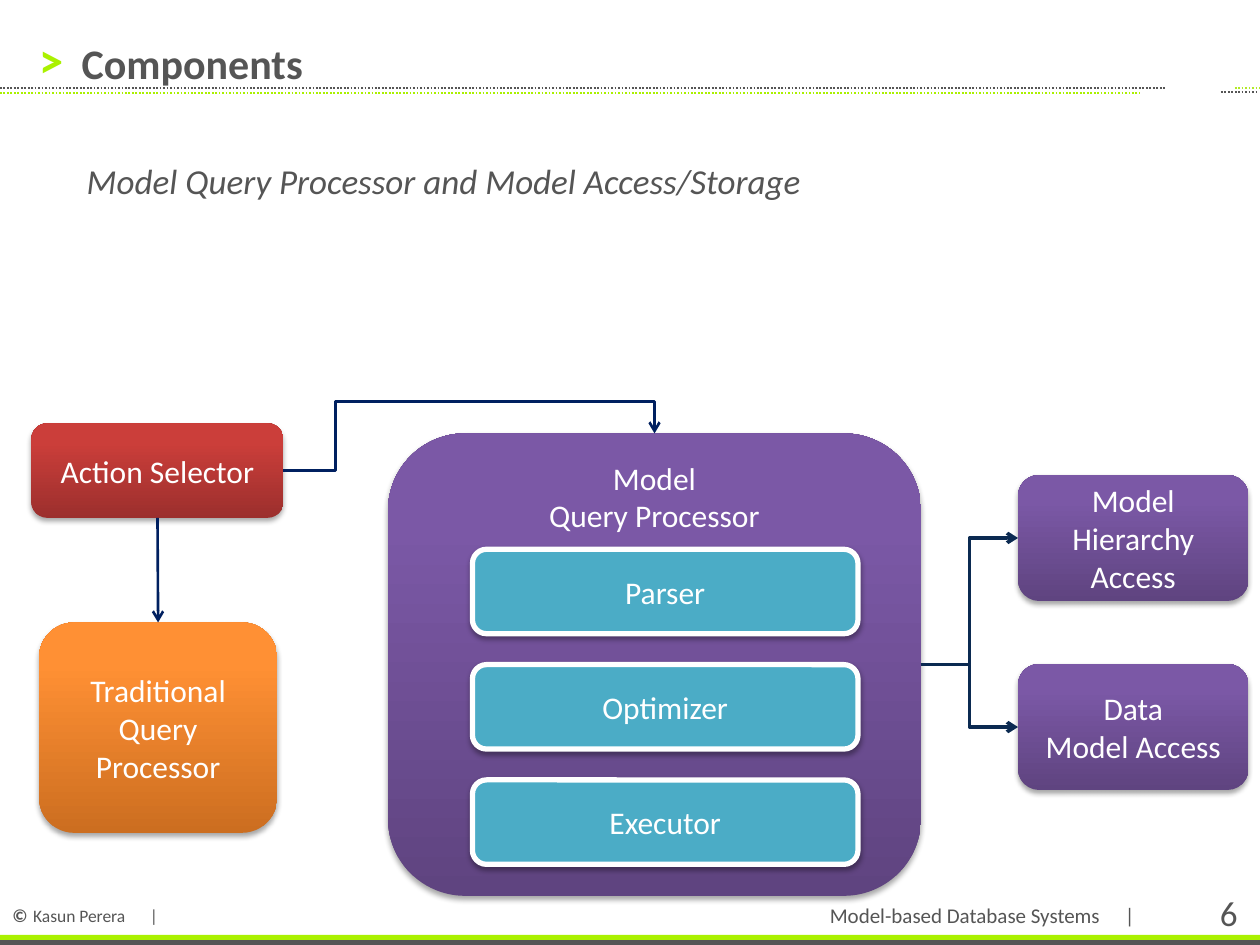
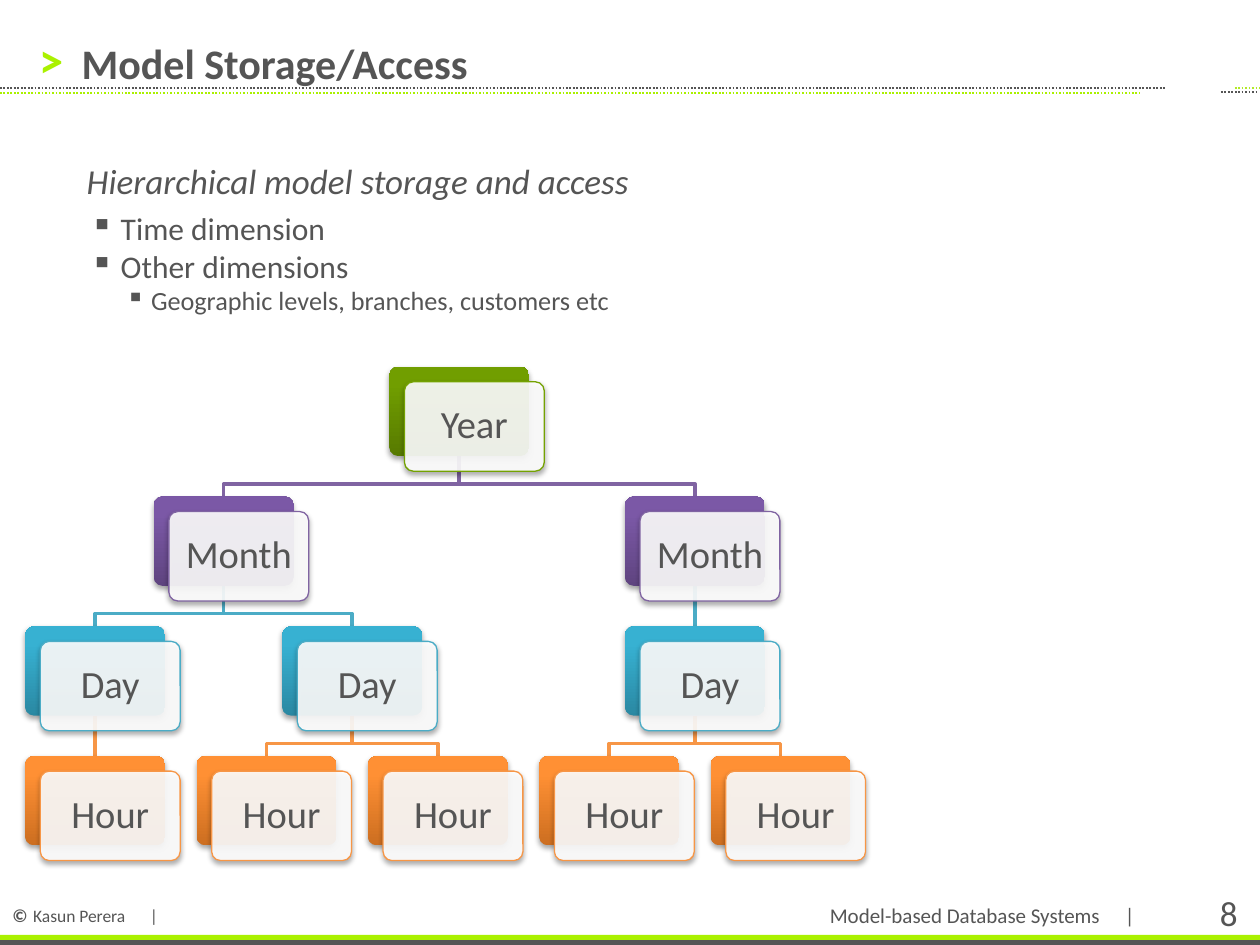
from dataclasses import dataclass

from lxml import etree
from pptx import Presentation
from pptx import util as u
from pptx.dml.color import RGBColor
from pptx.enum import dml, shapes, text
from pptx.oxml import ns

IN = u.Inches
ALIGN = text.PP_ALIGN
ANCHOR = text.MSO_ANCHOR
KIND = shapes.MSO_SHAPE
WIRE = shapes.MSO_CONNECTOR


@dataclass(frozen=True)
class Theme:
    font: str = "Calibri"
    grey: str = "555555"
    lime: str = "AAF100"
    pale_lime: str = "B2E928"
    white: str = "FFFFFF"
    navy: str = "002060"
    dark_blue: str = "0B2A51"
    teal: str = "4BACC6"
    red: tuple = ("9C2F2D", "CB3E3A")
    green: tuple = ("577A00", "719E00")
    purple: tuple = ("5F4480", "7B58A6")
    blue: tuple = ("2A88A2", "37B1D2")
    orange: tuple = ("CC6E20", "FF9034")
    mark: float = 28
    title: float = 24
    card: float = 22
    heading: float = 20
    body: float = 18
    detail: float = 15
    footer: float = 12
    copyright: float = 10


T = Theme()
LEVELS = [
    ("Year", T.green, "74A201"),
    ("Month", T.purple, "8064A2"),
    ("Day", T.blue, T.teal),
    ("Hour", T.orange, "F79646"),
]
HOUR = ()
YEAR = (((HOUR,), (HOUR, HOUR)), ((HOUR, HOUR),))
CARD_W, CARD_H, CARD_SHIFT = 1.11, 0.71, 0.12
TREE_LEFT, TREE_TOP, COLUMN_STEP, ROW_STEP = 0.2, 2.91, 1.36, 1.03


def rgb(value):
    return RGBColor.from_string(value)


def add_xml(parent, tag, **attrs):
    return etree.SubElement(parent, ns.qn(tag), attrs)


def add_run(p, words, size, color=T.grey, bold=False, italic=False):
    r = p.add_run()
    r.text = words
    f = r.font
    f.name, f.size, f.bold, f.italic = T.font, u.Pt(size), bold, italic
    f.color.rgb = rgb(color)


def add_textbox(s, box, anchor=ANCHOR.TOP, align=ALIGN.LEFT, inset=None):
    tf = s.shapes.add_textbox(*map(IN, box)).text_frame
    tf.word_wrap = True
    tf.vertical_anchor = anchor
    if inset is not None:
        set_insets(tf, inset)
    tf.paragraphs[0].alignment = align
    return tf


def set_insets(tf, inset):
    tf.margin_left = tf.margin_right = IN(inset)
    tf.margin_top = tf.margin_bottom = IN(inset)


def add_label(s, box, words, size, **options):
    color = options.pop("color", T.grey)
    bold = options.pop("bold", False)
    tf = add_textbox(s, box, **options)
    add_run(tf.paragraphs[0], words, size, color, bold)


def add_shadow(sp):
    effects = sp._element.spPr.find(ns.qn("a:effectLst"))
    shadow = add_xml(effects, "a:outerShdw", blurRad=str(u.Pt(3.1)),
                     dist=str(u.Pt(1.8)), dir="5400000", rotWithShape="0")
    add_xml(add_xml(shadow, "a:srgbClr", val="000000"), "a:alpha", val="35000")


def set_fill(sp, fill):
    if isinstance(fill, str):
        sp.fill.solid()
        sp.fill.fore_color.rgb = rgb(fill)
        return
    sp.fill.gradient()
    sp.fill.gradient_angle = 90
    for stop, color, position in zip(sp.fill.gradient_stops, fill, (0, 0.8)):
        stop.color.rgb = rgb(color)
        stop.position = position


def set_line(line, color, width):
    line.color.rgb = rgb(color)
    line.width = u.Pt(width)


def add_block(s, box, fill, kind=KIND.ROUNDED_RECTANGLE, line=None, shadow=True):
    sp = s.shapes.add_shape(kind, *map(IN, box))
    sp.shadow.inherit = False
    set_fill(sp, fill)
    if line:
        set_line(sp.line, *line)
    else:
        sp.line.fill.background()
    if shadow:
        add_shadow(sp)
    return sp


def write_block(sp, lines, size=T.body, color=T.white, anchor=ANCHOR.MIDDLE):
    tf = sp.text_frame
    tf.word_wrap = True
    tf.vertical_anchor = anchor
    for i, words in enumerate(lines):
        p = tf.add_paragraph() if i else tf.paragraphs[0]
        p.alignment = ALIGN.CENTER
        add_run(p, words, size, color)
    return tf


def add_line(s, start, end, color, width, kind=WIRE.STRAIGHT, dotted=False):
    c = s.shapes.add_connector(kind, *map(IN, start + end))
    set_line(c.line, color, width)
    if dotted:
        c.line.dash_style = dml.MSO_LINE.ROUND_DOT
    add_xml(c._element.spPr, "a:effectLst")
    return c


def add_arrow(s, source, source_site, target, target_site, color, width,
              kind=WIRE.ELBOW):
    c = add_line(s, (0, 0), (1, 1), color, width, kind)
    c.begin_connect(source, source_site)
    c.end_connect(target, target_site)
    add_xml(c._element.spPr.find(ns.qn("a:ln")), "a:tailEnd", type="arrow")
    return c


def set_two_bends(c, *bends):
    geometry = c._element.spPr.find(ns.qn("a:prstGeom"))
    geometry.set("prst", "bentConnector4")
    guides = geometry.find(ns.qn("a:avLst"))
    if guides is None:
        guides = add_xml(geometry, "a:avLst")
    for i, bend in enumerate(bends, 1):
        add_xml(guides, "a:gd", name=f"adj{i}", fmla=f"val {round(bend * 100000)}")


def add_copyright(s):
    p = add_textbox(s, (0, 7.08, 2.19, 0.34)).paragraphs[0]
    tabs = add_xml(p._p.get_or_add_pPr(), "a:tabLst")
    add_xml(tabs, "a:tab", pos=str(IN(1.09)), algn="l")
    add_run(p, "©", 10.5, bold=True)
    add_run(p, " ", 14)
    add_run(p, "Kasun Perera\t|", T.copyright)


def add_frame(prs, title, number):
    s = prs.slides.add_slide(prs.slide_layouts[6])
    add_copyright(s)
    for top, color in ((7.46, T.grey), (7.42, T.lime)):
        add_block(s, (0, top, 10, 0.04), color, KIND.RECTANGLE, shadow=False)
    for left, right, y, color in (
        (9.69, 9.99, 0.73, T.grey),
        (9.8, 10, 0.7, T.pale_lime),
        (0, 9.25, 0.7, T.grey),
        (0, 9.05, 0.74, T.lime),
    ):
        add_line(s, (left, y), (right, y), color, 1, dotted=True)
    add_label(s, (8.83, 7.11, 0.23, 0.31), "|", T.footer, align=ALIGN.RIGHT)
    add_label(s, (9.14, 7.03, 0.78, 0.44), number, T.heading, align=ALIGN.RIGHT)
    add_label(s, (0.31, 0.23, 0.23, 0.47), ">", T.mark, color=T.lime, bold=True,
              anchor=ANCHOR.MIDDLE, inset=0)
    add_label(s, (0.55, 0.22, 5.63, 0.56), title, T.title, bold=True,
              anchor=ANCHOR.MIDDLE)
    add_label(s, (2.97, 7.11, 5.86, 0.3), "Model-based Database Systems", T.footer,
              anchor=ANCHOR.MIDDLE, align=ALIGN.RIGHT)
    return s


def add_body(s, heading, bullets=()):
    tf = add_textbox(s, (0.31, 1.22, 9.38, 5.63))
    p = tf.paragraphs[0]
    p._p.get_or_add_pPr().set("marL", str(IN(0.28)))
    p.space_after = u.Pt(4)
    add_run(p, heading, T.heading, italic=True)
    for level, words in bullets:
        margin, hang, size = {1: (0.55, 0.24, T.body), 2: (0.79, 0.2, T.detail)}[level]
        p = tf.add_paragraph()
        p.level = level
        pPr = p._p.get_or_add_pPr()
        pPr.set("marL", str(IN(margin)))
        pPr.set("indent", str(-IN(hang)))
        add_xml(pPr, "a:buChar", char="▪")
        add_run(p, words, size)


def add_components(s):
    processor = add_block(s, (3.08, 3.44, 4.23, 3.67), T.purple)
    tf = write_block(processor, ["Model", "Query Processor"], anchor=ANCHOR.TOP)
    tf.margin_top = IN(0.02)
    stores = []
    for top, lines in ((3.77, ["Model", "Hierarchy Access"]),
                       (5.27, ["Data", "Model Access"])):
        store = add_block(s, (8.08, top, 1.83, 1), T.purple)
        write_block(store, lines)
        stores.append(store)
    for store in stores:
        add_arrow(s, processor, 3, store, 1, T.dark_blue, 2)
    for i, stage in enumerate(("Parser", "Optimizer", "Executor")):
        box = (3.75, 4.36 + 0.915 * i, 3.06, 0.67)
        write_block(add_block(s, box, T.teal, line=(T.white, 3)), [stage])
    selector = add_block(s, (0.25, 3.36, 2, 0.75), T.red)
    write_block(selector, ["Action Selector"])
    traditional = add_block(s, (0.31, 4.94, 1.89, 1.67), T.orange)
    write_block(traditional, ["Traditional Query Processor"])
    route = add_arrow(s, selector, 3, processor, 0, T.navy, 1.5)
    set_two_bends(route, 0.14, 1.86)
    add_arrow(s, selector, 2, traditional, 0, T.navy, 1.5, WIRE.STRAIGHT)


def lay_out(node, level, leaves, cards, links):
    if node:
        columns = [lay_out(child, level + 1, leaves, cards, links) for child in node]
        column = (columns[0] + columns[-1]) / 2
        links.extend((level, column, child) for child in columns)
    else:
        column = len(leaves)
        leaves.append(column)
    cards.append((level, column))
    return column


def corner(level, column):
    return TREE_LEFT + COLUMN_STEP * column, TREE_TOP + ROW_STEP * level


def add_link(s, level, parent, child):
    color = LEVELS[level + 1][2]
    x, top = corner(level, parent)
    end_x, end_y = corner(level + 1, child)
    x, end_x, top = x + CARD_W / 2, end_x + CARD_W / 2, top + CARD_H
    if parent == child:
        add_line(s, (x, top), (x, end_y), color, 2)
        return
    turn = top + 0.22
    outline = s.shapes.build_freeform(IN(x), IN(top))
    points = ((x, turn), (end_x, turn), (end_x, end_y))
    outline.add_line_segments([tuple(map(IN, point)) for point in points], close=False)
    sp = outline.convert_to_shape()
    sp.shadow.inherit = False
    sp.fill.background()
    set_line(sp.line, color, 2)


def add_card(s, level, column):
    name, gradient, edge = LEVELS[level]
    x, y = corner(level, column)
    back = add_block(s, (x, y, CARD_W, CARD_H), gradient)
    front = add_block(s, (x + CARD_SHIFT, y + CARD_SHIFT, CARD_W, CARD_H), T.white,
                      line=(edge, 0.75))
    for sp in (back, front):
        sp.adjustments[0] = 0.1
    color = front._element.spPr.find(ns.qn("a:solidFill"))[0]
    add_xml(color, "a:alpha", val="90000")
    tf = write_block(front, [name], T.card, T.grey)
    set_insets(tf, 0.07)
    tf.paragraphs[0].line_spacing = 0.9


def add_tree(s):
    cards, links = [], []
    lay_out(YEAR, 0, [], cards, links)
    for link in links:
        add_link(s, *link)
    for card in cards:
        add_card(s, *card)


def main():
    prs = Presentation()
    prs.slide_width, prs.slide_height = IN(10), IN(7.5)
    s = add_frame(prs, "Components", "6")
    add_body(s, "Model Query Processor and Model Access/Storage")
    add_components(s)
    s = add_frame(prs, "Model Storage/Access", "8")
    add_body(s, "Hierarchical model storage and access", [
        (1, "Time dimension"),
        (1, "Other dimensions"),
        (2, "Geographic levels, branches, customers etc"),
    ])
    add_tree(s)
    prs.save("out.pptx")


if __name__ == "__main__":
    main()
